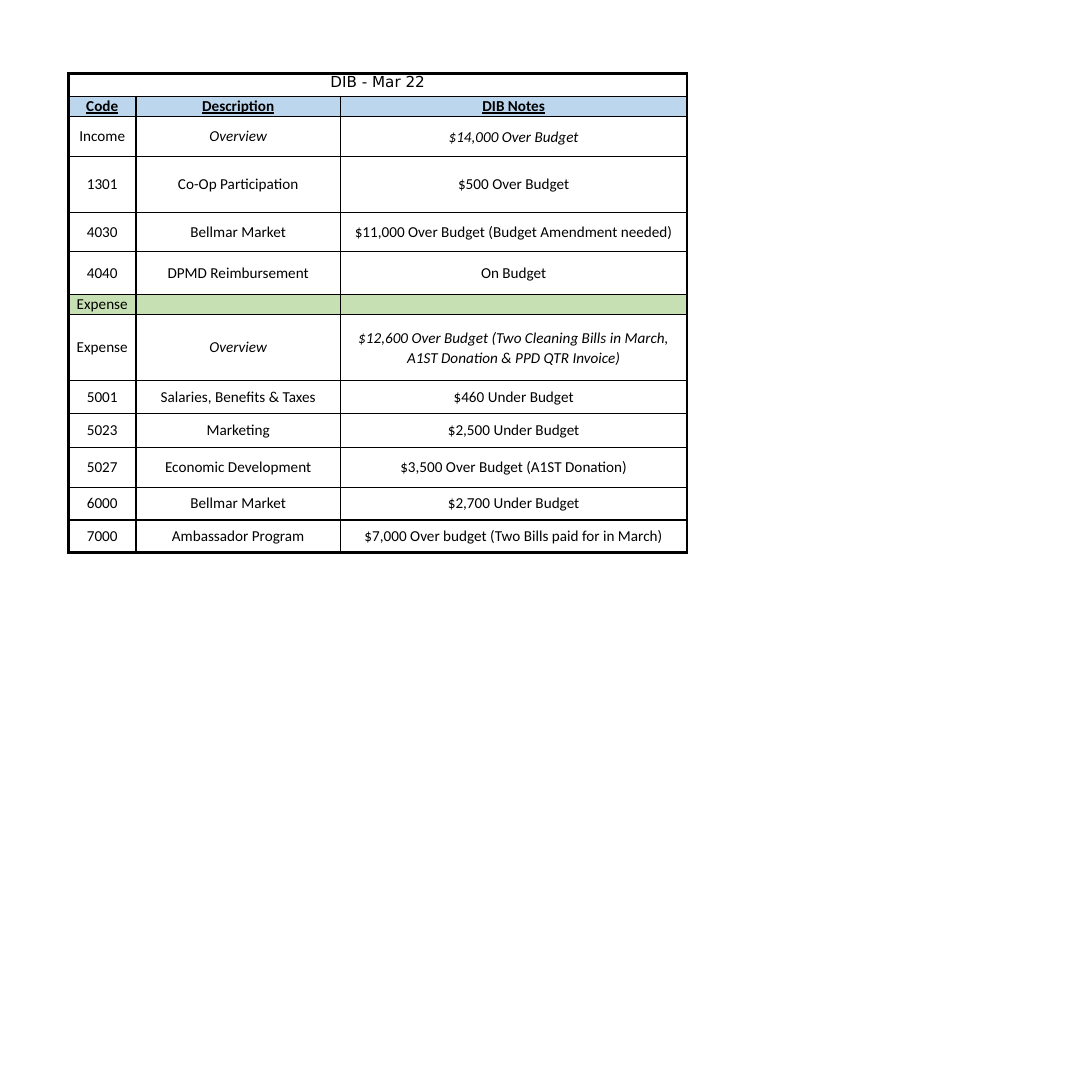
"""Build the DIB budget notes slide for March 22."""
from dataclasses import dataclass

from pptx import Presentation
from pptx.dml.color import RGBColor
from pptx.enum.text import MSO_ANCHOR as Anchor, PP_ALIGN as Align
from pptx.oxml import parse_xml
from pptx.oxml.ns import nsdecls, qn
from pptx.table import Table, _Cell as Cell
from pptx.util import Inches, Pt

COLORS = {"ink": "000000", "header": "BCD6ED", "section": "C6DFB3"}
COLUMN_WIDTHS = (0.68, 2.06, 3.49)
NO_GRID_STYLE = "{2D5ABB26-0587-4C30-8999-92F81FD0307C}"
FONT_SIZE = 11
THIN, THICK = 1, 2.25


@dataclass(frozen=True)
class BudgetRow:
    height: float
    texts: tuple[str, str, str]
    fill: str = ""
    font: str = "Calibri"
    heading: bool = False
    overview: bool = False
    title: bool = False
    anchor: Anchor = Anchor.MIDDLE


ROWS = (
    BudgetRow(0.23, ("DIB - Mar 22", "", ""), font="DejaVu Sans", title=True, anchor=Anchor.TOP),
    BudgetRow(0.2, ("Code", "Description", "DIB Notes"), fill="header", heading=True),
    BudgetRow(0.41, ("Income", "Overview", "$14,000 Over Budget"), overview=True),
    BudgetRow(0.56, ("1301", "Co-Op Participation", "$500 Over Budget")),
    BudgetRow(0.39, ("4030", "Bellmar Market", "$11,000 Over Budget (Budget Amendment needed)")),
    BudgetRow(0.44, ("4040", "DPMD Reimbursement", "On Budget")),
    BudgetRow(0.2, ("Expense", "", ""), fill="section", anchor=Anchor.TOP),
    BudgetRow(
        0.66,
        ("Expense", "Overview",
         "$12,600 Over Budget (Two Cleaning Bills in March, A1ST Donation & PPD QTR Invoice)"),
        overview=True,
    ),
    BudgetRow(0.34, ("5001", "Salaries, Benefits & Taxes", "$460 Under Budget")),
    BudgetRow(0.34, ("5023", "Marketing", "$2,500 Under Budget")),
    BudgetRow(0.4, ("5027", "Economic Development", "$3,500 Over Budget (A1ST Donation)")),
    BudgetRow(0.33, ("6000", "Bellmar Market", "$2,700 Under Budget")),
    BudgetRow(0.33, ("7000", "Ambassador Program", "$7,000 Over budget (Two Bills paid for in March)")),
)


def draw_borders(cell: Cell, row_index: int, column_index: int) -> None:
    last_column = len(COLUMN_WIDTHS) - 1
    thick_sides = {
        "L": column_index == 0,
        "R": column_index == last_column or ROWS[row_index].title,
        "T": row_index == 0,
        "B": row_index == len(ROWS) - 1,
    }
    properties = cell._tc.get_or_add_tcPr()
    for side, is_thick in thick_sides.items():
        width = Pt(THICK if is_thick else THIN)
        properties.append(parse_xml(
            f'<a:ln{side} {nsdecls("a")} w="{width}"><a:solidFill>'
            f'<a:srgbClr val="{COLORS["ink"]}"/></a:solidFill></a:ln{side}>'
        ))


def fill_cell(cell: Cell, row: BudgetRow, column_index: int) -> None:
    if row.fill:
        cell.fill.solid()
        cell.fill.fore_color.rgb = RGBColor.from_string(COLORS[row.fill])
    else:
        cell.fill.background()
    is_note = column_index == 2
    cell.margin_left = cell.margin_right = Inches(0.1 if is_note else 0)
    cell.margin_top = cell.margin_bottom = Inches(0)
    cell.vertical_anchor = row.anchor
    cell.text = row.texts[column_index]
    para = cell.text_frame.paragraphs[0]
    para.alignment = Align.CENTER
    if row.overview and is_note:
        para.line_spacing = 1.1
    font = para.font
    font.name, font.size = row.font, Pt(FONT_SIZE)
    font.bold = font.underline = row.heading
    font.italic = row.overview and column_index > 0
    font.color.rgb = RGBColor.from_string(COLORS["ink"])
    if not cell.text:
        para._p.append(parse_xml(f'<a:endParaRPr {nsdecls("a")} sz="{FONT_SIZE * 100}"/>'))


def fill_table(table: Table) -> None:
    table.first_row = table.horz_banding = False
    table._tbl.tblPr.find(qn("a:tableStyleId")).text = NO_GRID_STYLE
    for column, width in zip(table.columns, COLUMN_WIDTHS):
        column.width = Inches(width)
    for row_index, row in enumerate(ROWS):
        table.rows[row_index].height = Inches(row.height)
        if row.title:
            table.cell(row_index, 0).merge(table.cell(row_index, len(COLUMN_WIDTHS) - 1))
        for column_index in range(len(COLUMN_WIDTHS)):
            cell = table.cell(row_index, column_index)
            if not cell.is_spanned:
                draw_borders(cell, row_index, column_index)
            fill_cell(cell, row, column_index)


def main() -> None:
    deck = Presentation()
    deck.slide_width = deck.slide_height = Inches(11)
    page = deck.slides.add_slide(deck.slide_layouts[6])
    frame = page.shapes.add_table(
        len(ROWS), len(COLUMN_WIDTHS), Inches(0.69), Inches(0.74),
        Inches(sum(COLUMN_WIDTHS)), Inches(sum(row.height for row in ROWS)),
    )
    fill_table(frame.table)
    deck.save("out.pptx")


if __name__ == "__main__":
    main()
